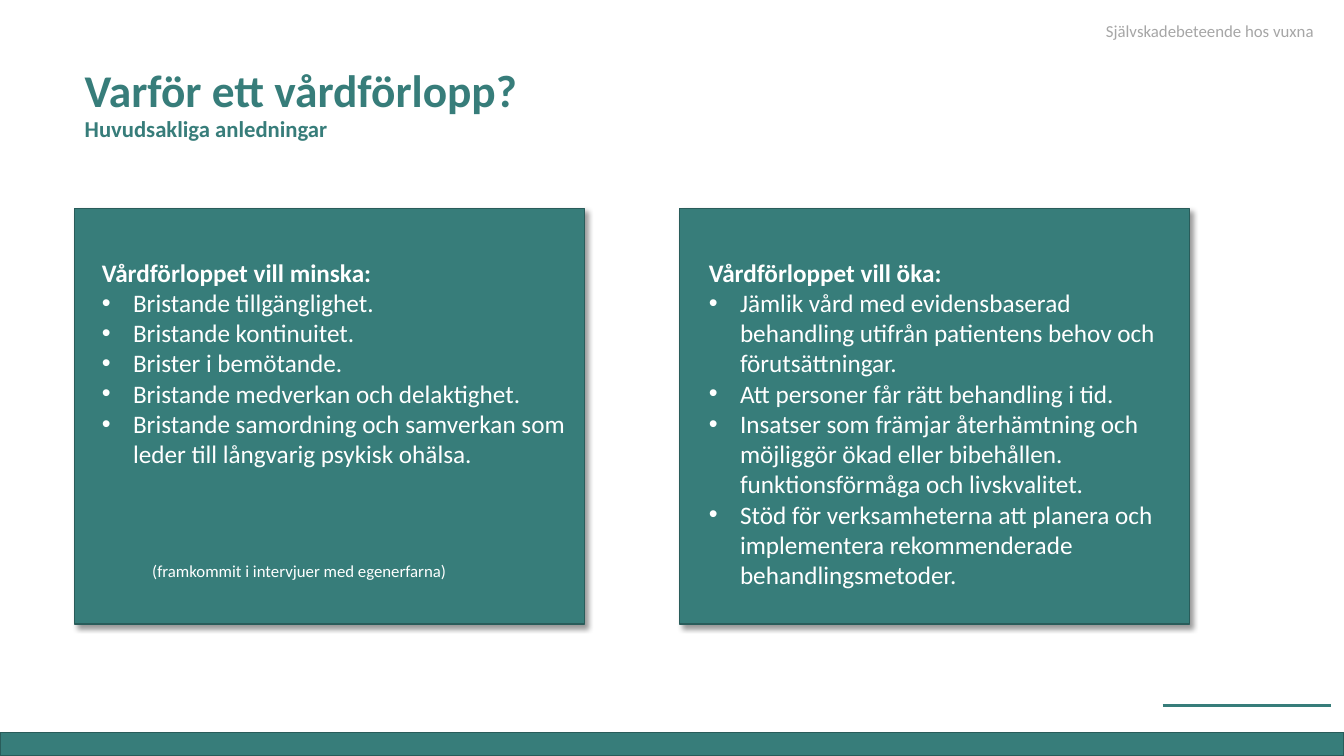
from lxml.etree import SubElement
from pptx import Presentation
from pptx.dml.color import RGBColor
from pptx.enum.shapes import MSO_CONNECTOR, MSO_SHAPE
from pptx.enum.text import MSO_ANCHOR, MSO_AUTO_SIZE
from pptx.oxml import parse_xml
from pptx.oxml.ns import qn
from pptx.util import Inches, Pt

TEAL, DARK_TEAL, WHITE, GREY = "377D7A", "295C5A", "FFFFFF", "A6A6A6"
SHADOW = """<a:effectLst xmlns:a="http://schemas.openxmlformats.org/drawingml/2006/main">
<a:outerShdw blurRad="50800" dist="38100" dir="2700000" algn="tl" rotWithShape="0">
<a:srgbClr val="000000"><a:alpha val="40000"/></a:srgbClr></a:outerShdw></a:effectLst>"""


def rgb(hex_colour):
    return RGBColor.from_string(hex_colour)


def write(paragraph, text, size=18, colour=WHITE, bold=False, bullet=False,
          indent=0, before=0, spacing=1.0):
    """Add a formatted run, with paragraph spacing, indent and bullet."""
    props = paragraph._p.get_or_add_pPr()
    if not paragraph.runs:
        props.set("marL", str(Inches(0.31 if bullet else indent)))
        props.set("indent", str(Inches(-0.31 if bullet else 0)))
        if bullet:
            SubElement(props, qn("a:buFont")).set("typeface", "Arial")
            SubElement(props, qn("a:buChar")).set("char", "•")
        else:
            SubElement(props, qn("a:buNone"))
        paragraph.space_before = Pt(before)
        paragraph.line_spacing = spacing
    run = paragraph.add_run()
    run.text = text
    run.font.name, run.font.size, run.font.bold = "Calibri", Pt(size), bold
    run.font.color.rgb = rgb(colour)


deck = Presentation()
deck.slide_width, deck.slide_height = Inches(13.33), Inches(7.5)
slide = deck.slides.add_slide(deck.slide_layouts[3])
shapes = slide.shapes
title, decrease, increase = slide.placeholders

# Title with subtitle on its second line
title.left, title.top, title.width, title.height = map(Inches, (0.74, 0.79, 10, 0.67))
title.text_frame.vertical_anchor = MSO_ANCHOR.BOTTOM
title.text_frame.auto_size = MSO_AUTO_SIZE.NONE
heading = title.text_frame.paragraphs[0]
heading.alignment = 1
write(heading, "Varför ett vårdförlopp?", size=32.4, colour=TEAL, bold=True, spacing=0.9)
heading.add_line_break()
write(heading, "Huvudsakliga anledningar", size=16.2, colour=TEAL, bold=True)

# Bottom band and the two panels, all behind the text
PANEL_LEFT, PANEL_STEP = 0.74, 6
boxes = [(0, 7.27, 13.33, 0.23)]
boxes += [(PANEL_LEFT + PANEL_STEP * column, 2.07, 5.06, 4.12) for column in range(2)]
for box in boxes:
    panel = shapes.add_shape(MSO_SHAPE.RECTANGLE, *map(Inches, box))
    panel.fill.solid()
    panel.fill.fore_color.rgb = rgb(TEAL)
    panel.line.color.rgb = rgb(DARK_TEAL)
    panel.line.width = Pt(1)
    if box is boxes[0]:
        panel.shadow.inherit = False
    else:
        panel._element.spPr.append(parse_xml(SHADOW))
    title._element.addprevious(panel._element)

# Lists: what the care pathway wants to decrease and increase
lists = [
    (decrease, 0.91, "Vårdförloppet vill minska:", [
        "Bristande tillgänglighet.",
        "Bristande kontinuitet.",
        "Brister i bemötande.",
        "Bristande medverkan och delaktighet.",
        "Bristande samordning och samverkan som leder till långvarig psykisk ohälsa.",
    ]),
    (increase, 6.93, "Vårdförloppet vill öka:", [
        "Jämlik vård med evidensbaserad behandling utifrån patientens behov och förutsättningar.",
        "Att personer får rätt behandling i tid.",
        "Insatser som främjar återhämtning och möjliggör ökad eller bibehållen. "
        "funktionsförmåga och livskvalitet.",
        "Stöd för verksamheterna att planera och implementera rekommenderade "
        "behandlingsmetoder.",
    ]),
]
for body, left, lead, points in lists:
    body.left, body.top, body.width, body.height = map(Inches, (left, 2.5, 4.83, 3.64))
    frame = body.text_frame
    frame.vertical_anchor = MSO_ANCHOR.TOP
    frame.auto_size = MSO_AUTO_SIZE.NONE
    write(frame.paragraphs[0], lead, bold=True)
    for point in points:
        write(frame.add_paragraph(), point, bullet=True)
write(decrease.text_frame.add_paragraph(), "(framkommit i intervjuer med egenerfarna)",
      size=12, indent=0.5, before=66)

# Topic label in the top right corner
topic = shapes.add_textbox(*map(Inches, (10.87, 0.16, 2.36, 0.3)))
topic.text_frame.word_wrap = True
write(topic.text_frame.paragraphs[0], "Självskadebeteende hos vuxna", size=12, colour=GREY)

# Sender rule in the bottom right corner
sender = shapes.add_connector(MSO_CONNECTOR.STRAIGHT, *map(Inches, (11.53, 7, 13.2, 7)))
sender.line.color.rgb = rgb(TEAL)
sender.line.width = Pt(2.5)
SubElement(sender._element.spPr, qn("a:effectLst"))

deck.save("out.pptx")
